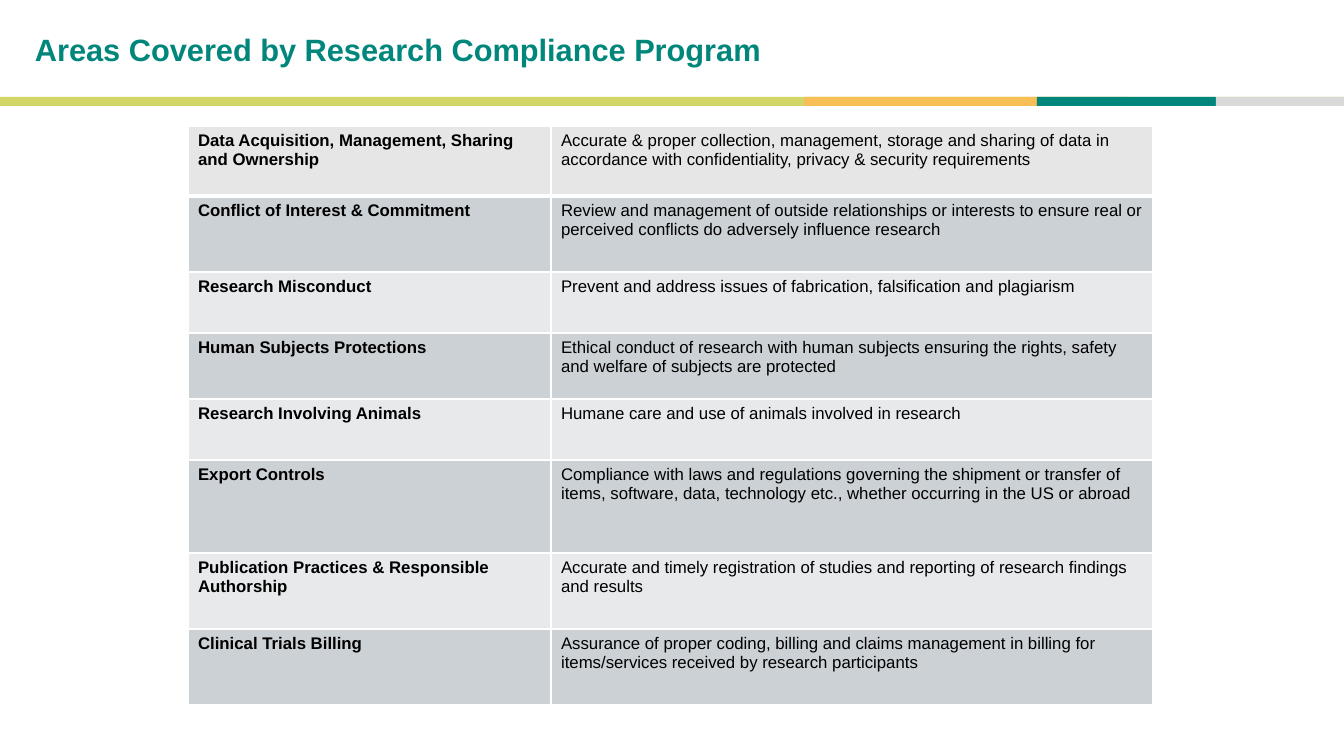
from lxml.etree import SubElement
from pptx import Presentation
from pptx.dml.color import RGBColor
from pptx.enum.shapes import MSO_SHAPE as SHAPE
from pptx.enum.text import MSO_ANCHOR as ANCHOR
from pptx.oxml.ns import qn
from pptx.util import Pt

COLORS = {
    "lime": "D1D666", "orange": "F8BF56", "teal": "00867B", "gray": "D9D9D9",
    "first": "E7E6E6", "dark": "CCD1D5", "light": "E7E9EB",
    "black": "000000", "white": "FFFFFF",
}
BARS = [("lime", 0, 1344), ("orange", 804, 323), ("teal", 1037, 179), ("gray", 1216, 128)]
COLUMN_WIDTHS = [363, 602]
AREAS = [
    (70, "Data Acquisition, Management, Sharing and Ownership",
     "Accurate & proper collection, management, storage and sharing of data in "
     "accordance with confidentiality, privacy & security requirements"),
    (76, "Conflict of Interest & Commitment",
     "Review and management of outside relationships or interests to ensure real "
     "or perceived conflicts do adversely influence research"),
    (61, "Research Misconduct",
     "Prevent and address issues of fabrication, falsification and plagiarism"),
    (66, "Human Subjects Protections",
     "Ethical conduct of research with human subjects ensuring the rights, safety "
     "and welfare of subjects are protected"),
    (61, "Research Involving Animals",
     "Humane care and use of animals involved in research"),
    (93, "Export Controls",
     "Compliance with laws and regulations governing the shipment or transfer of "
     "items, software, data, technology etc., whether occurring in the US or abroad"),
    (76, "Publication Practices & Responsible Authorship",
     "Accurate and timely registration of studies and reporting of research findings "
     "and results"),
    (76, "Clinical Trials Billing",
     "Assurance of proper coding, billing and claims management in billing for "
     "items/services received by research participants"),
]


def px(n):
    return round(n * 914400 / 100.8)


def rgb(name):
    return RGBColor.from_string(COLORS[name])


def write(tf, text, size=12, color="black", bold=False, spacing=None):
    tf.word_wrap = True
    p = tf.paragraphs[0]
    p.line_spacing = spacing
    r = p.add_run()
    r.text = text
    r.font.name = "Arial"
    r.font.size = Pt(size)
    r.font.bold = bold
    r.font.color.rgb = rgb(color)


def add_title(s, text):
    sp = s.shapes.add_textbox(px(25), px(17), px(1286), px(70))
    write(sp.text_frame, text, size=22, color="teal", bold=True, spacing=0.9)
    sp.text_frame.vertical_anchor = ANCHOR.MIDDLE


def add_bar(s, color, left, width):
    sp = s.shapes.add_shape(SHAPE.RECTANGLE, px(left), px(97), px(width), px(9))
    sp.shadow.inherit = False
    sp.fill.solid()
    sp.fill.fore_color.rgb = rgb(color)
    sp.line.fill.background()


def add_borders(cell, **widths):
    tcPr = cell._tc.get_or_add_tcPr()
    for side in "LRTB":
        ln = SubElement(tcPr, qn(f"a:ln{side}"), w=str(Pt(widths.get(side, 1))))
        fill = SubElement(ln, qn("a:solidFill"))
        SubElement(fill, qn("a:srgbClr"), val=COLORS["white"])


def add_area_table(s):
    height = sum(area[0] for area in AREAS)
    table = s.shapes.add_table(len(AREAS), 2, px(188), px(126),
                               px(sum(COLUMN_WIDTHS)), px(height)).table
    for column, width in zip(table.columns, COLUMN_WIDTHS):
        column.width = px(width)
    for i, (row_height, *texts) in enumerate(AREAS):
        table.rows[i].height = px(row_height)
        shade = "first" if i == 0 else ("light", "dark")[i % 2]
        for j, text in enumerate(texts):
            cell = table.cell(i, j)
            add_borders(cell, T=3 if i == 1 else 1, B=3 if i == 0 else 1)
            cell.fill.solid()
            cell.fill.fore_color.rgb = rgb(shade)
            write(cell.text_frame, text, bold=j == 0)


def main():
    prs = Presentation()
    prs.slide_width, prs.slide_height = px(1344), px(756)
    s = prs.slides.add_slide(prs.slide_layouts[6])
    for bar in BARS:
        add_bar(s, *bar)
    add_title(s, "Areas Covered by Research Compliance Program")
    add_area_table(s)
    prs.save("out.pptx")


if __name__ == "__main__":
    main()
